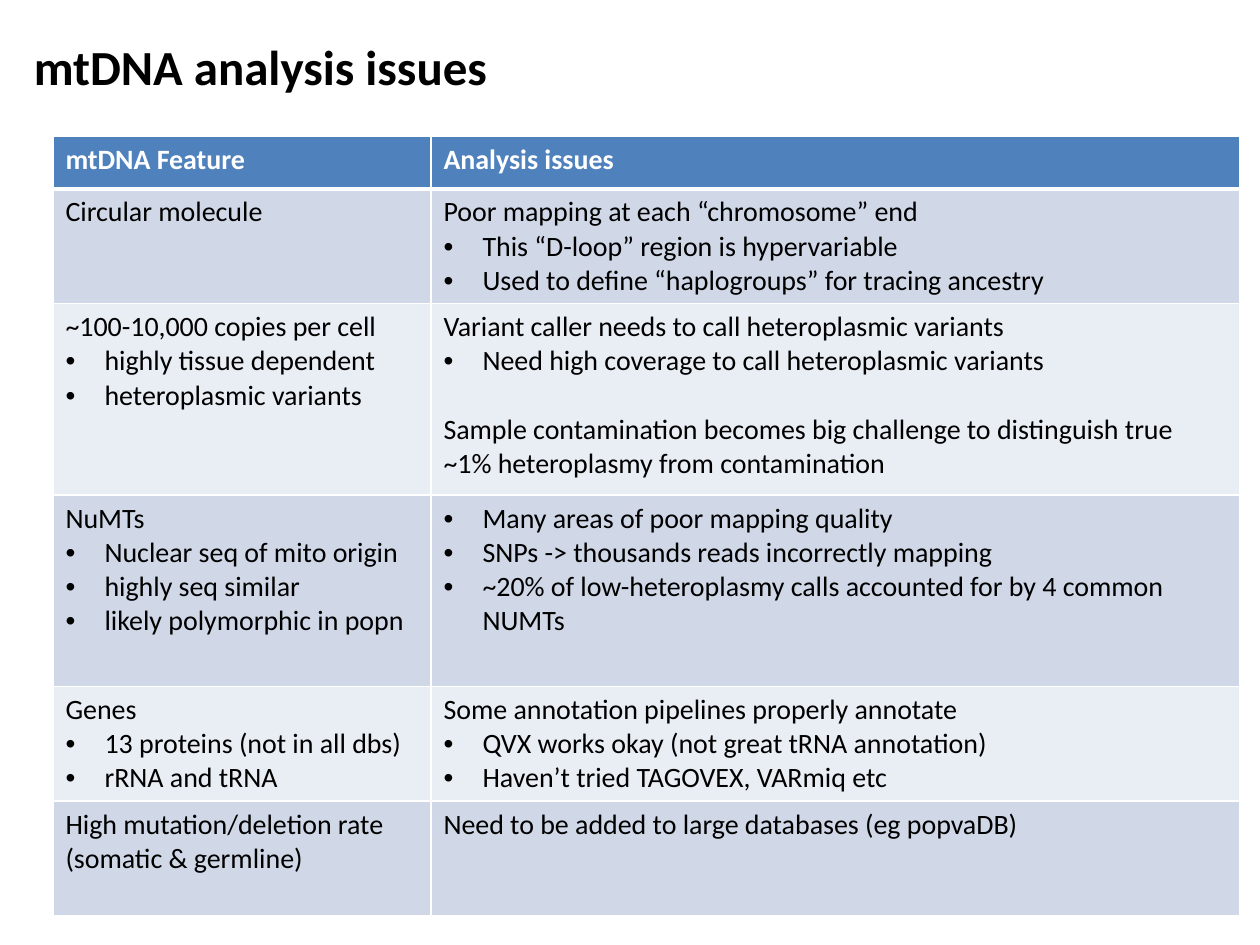
import pptx
import pptx.dml.color
import pptx.enum.text
import pptx.oxml
import pptx.oxml.ns
import pptx.util

Inches, Pt = pptx.util.Inches, pptx.util.Pt
RGB = pptx.dml.color.RGBColor.from_string
ANCHOR = pptx.enum.text.MSO_ANCHOR

THEME = {
    "font": "Calibri",
    "title": {"size": Pt(28), "bold": True, "color": "000000"},
    "head": {"size": Pt(16), "bold": True, "color": "FFFFFF"},
    "body": {"size": Pt(16), "bold": False, "color": "000000"},
    "head_fill": "4F81BD",
    "bands": ["D0D8E8", "E9EDF4"],
    "border": "FFFFFF",
}

BULLET, GAP = "• ", "^ "
ROWS = [
    (0.42, ["mtDNA Feature"], ["Analysis issues"]),
    (0.91, ["Circular molecule"],
     ["Poor mapping at each “chromosome” end",
      "• This “D-loop” region is hypervariable",
      "• Used to define “haplogroups” for tracing ancestry"]),
    (1.52, ["~100-10,000 copies per cell",
            "• highly tissue dependent",
            "• heteroplasmic variants"],
     ["Variant caller needs to call heteroplasmic variants",
      "• Need high coverage to call heteroplasmic variants",
      "^ Sample contamination becomes big challenge to distinguish true "
      "~1% heteroplasmy from contamination"]),
    (1.52, ["NuMTs",
            "• Nuclear seq of mito origin",
            "• highly seq similar",
            "• likely polymorphic in popn"],
     ["• Many areas of poor mapping quality",
      "• SNPs -> thousands reads incorrectly mapping",
      "• ~20% of low-heteroplasmy calls accounted for by 4 common NUMTs"]),
    (0.91, ["Genes",
            "• 13 proteins (not in all dbs)",
            "• rRNA and tRNA"],
     ["Some annotation pipelines properly annotate",
      "• QVX works okay (not great tRNA annotation)",
      "• Haven’t tried TAGOVEX, VARmiq etc"]),
    (0.91, ["High mutation/deletion rate", "(somatic & germline)"],
     ["Need to be added to large databases (eg popvaDB)"]),
]


def write(tf, lines, style):
    for i, line in enumerate(lines):
        p = tf.paragraphs[0] if i == 0 else tf.add_paragraph()
        r = p.add_run()
        r.text = line.removeprefix(BULLET).removeprefix(GAP)
        for name, value in {"name": THEME["font"], "size": style["size"], "bold": style["bold"]}.items():
            setattr(r.font, name, value)
        r.font.color.rgb = RGB(style["color"])
        if line.startswith(GAP):
            p.space_before = Pt(19.5)
        if line.startswith(BULLET):
            pPr = p._p.get_or_add_pPr()
            pPr.set("marL", str(Inches(0.31)))
            pPr.set("indent", str(-Inches(0.31)))
            ns = pptx.oxml.ns.nsdecls("a")
            pPr.append(pptx.oxml.parse_xml(f'<a:buFont {ns} typeface="Arial"/>'))
            pPr.append(pptx.oxml.parse_xml(f'<a:buChar {ns} char="•"/>'))


def add_borders(cell, widths):
    tcPr = cell._tc.get_or_add_tcPr()
    for i, (side, width) in enumerate(widths.items()):
        tcPr.insert(i, pptx.oxml.parse_xml(
            f'<a:ln{side} {pptx.oxml.ns.nsdecls("a")} w="{Pt(width)}">'
            f'<a:solidFill><a:srgbClr val="{THEME["border"]}"/></a:solidFill></a:ln{side}>'))


prs = pptx.Presentation()
prs.slide_width, prs.slide_height = Inches(10), Inches(7.5)
s = prs.slides.add_slide(prs.slide_layouts[6])

title = s.shapes.add_textbox(Inches(0.17), Inches(0.26), Inches(9.33), Inches(0.53))
tf = title.text_frame
for name, value in {"word_wrap": True, "vertical_anchor": ANCHOR.MIDDLE}.items():
    setattr(tf, name, value)
write(tf, ["mtDNA analysis issues"], THEME["title"])

height = sum(row[0] for row in ROWS)
table = s.shapes.add_table(len(ROWS), 2, Inches(0.42), Inches(1.08), Inches(9.42), Inches(height)).table
for column, width in zip(table.columns, [3, 6.42]):
    column.width = Inches(width)

for i, (row_height, *texts) in enumerate(ROWS):
    table.rows[i].height = Inches(row_height)
    for j, lines in enumerate(texts):
        cell = table.cell(i, j)
        cell.fill.solid()
        cell.fill.fore_color.rgb = RGB(THEME["bands"][(i - 1) % 2] if i else THEME["head_fill"])
        add_borders(cell, {"L": 1, "R": 1, "T": 3 if i == 1 else 1, "B": 3 if i == 0 else 1})
        write(cell.text_frame, lines, THEME["body" if i else "head"])

prs.save("out.pptx")
